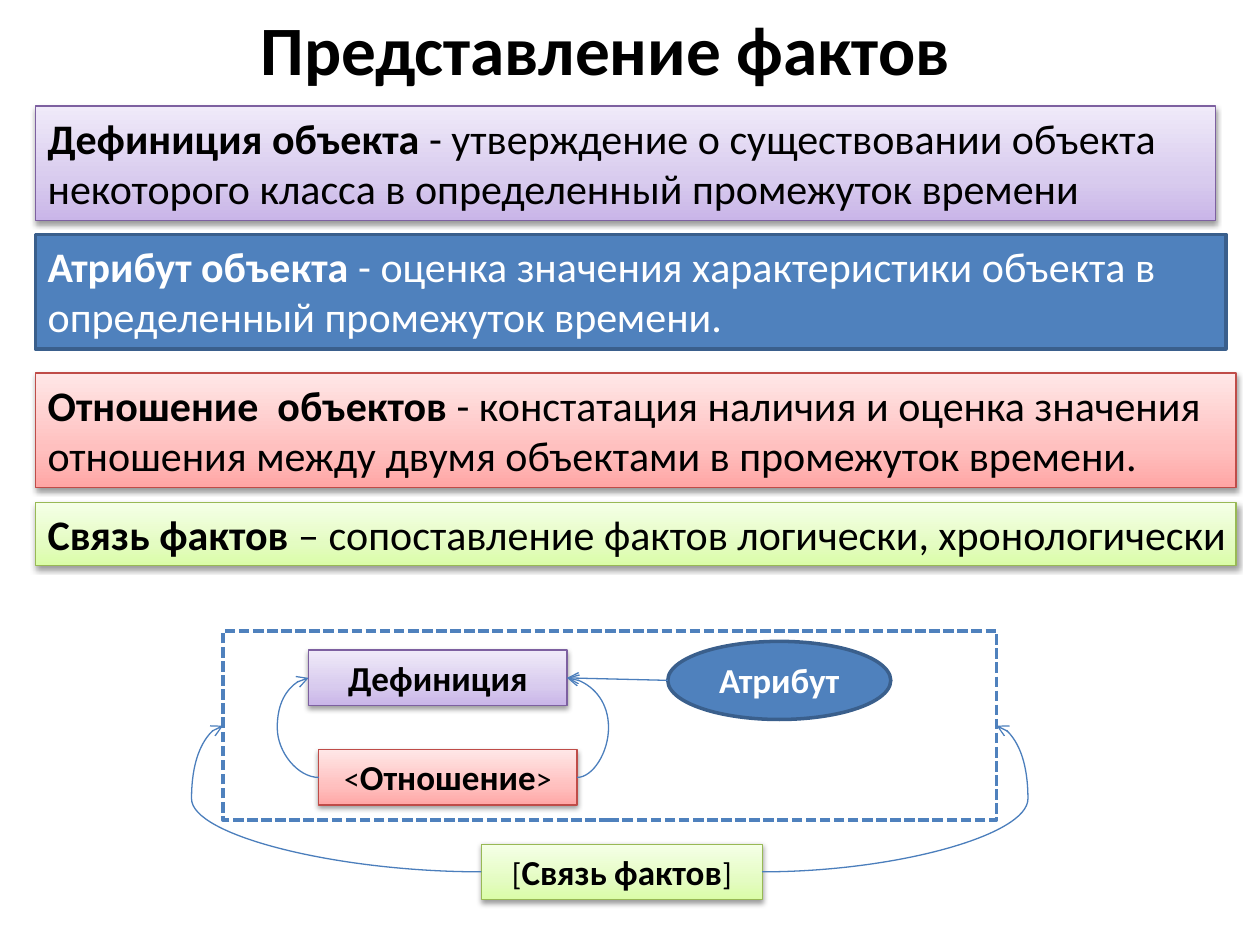
"""Build the slide on representing facts: four definitions and a diagram of their links."""
import pptx
import pptx.util
import pptx.oxml
import pptx.oxml.ns
import pptx.dml.color
import pptx.enum.dml
import pptx.enum.shapes
import pptx.enum.text
import copy

Inches, Pt = pptx.util.Inches, pptx.util.Pt
Align, Anchor = pptx.enum.text.PP_ALIGN, pptx.enum.text.MSO_ANCHOR
Shape, Connector = pptx.enum.shapes.MSO_SHAPE, pptx.enum.shapes.MSO_CONNECTOR
NAMESPACE = pptx.oxml.ns.nsdecls("a")

FONT = "Calibri"
COLORS = {"black": "000000", "white": "FFFFFF", "frame": "4F81BD", "link": "4B7EBC"}
STYLES = {
    "definition": {"fill": ("C9B5E8", "D8CBEE", "F0EAF9"), "line": "7D60A0"},
    "attribute": {"fill": ("4F81BD",), "line": "3A5F8C"},
    "relation": {"fill": ("FFA6A5", "FFC0BF", "FFE7E7"), "line": "BF4C48"},
    "fact link": {"fill": ("DAFDA7", "E4FCC2", "F5FFE7"), "line": "98B955"},
}
STOPS = (0, 0.35, 1)

TITLE = "Представление фактов"
LEFT = 0.28
STATEMENTS = [
    ("definition", 0.84, 9.37, 0.91, "Дефиниция объекта ",
     "- утверждение о существовании объекта некоторого класса в определенный промежуток времени"),
    ("attribute", 1.86, 9.45, 0.91, "Атрибут объекта ",
     "- оценка значения характеристики объекта в определенный промежуток времени."),
    ("relation", 2.96, 9.53, 0.91, "Отношение  объектов ",
     "- констатация наличия и оценка значения отношения между двумя объектами в промежуток времени."),
    ("fact link", 3.99, 9.53, 0.5, "Связь фактов ",
     "– сопоставление фактов логически, хронологически"),
]
NODES = [
    ("definition", Shape.RECTANGLE, (2.45, 5.16, 2.05, 0.44), [("Дефиниция", 20, True)]),
    ("attribute", Shape.OVAL, (5.3, 5.09, 1.77, 0.62), [("Атрибут", 20, True)]),
    ("relation", Shape.RECTANGLE, (2.53, 5.95, 2.05, 0.44),
     [("<", 18, False), ("Отношение", 20, True), (">", 18, False)]),
    ("fact link", Shape.RECTANGLE, (3.82, 6.7, 2.23, 0.44),
     [("[", 18, False), ("Связь", 20, True), (" ", 18, True), ("фактов", 20, True), ("]", 18, False)]),
]
FRAME = (1.77, 5.01, 6.14, 1.5)
CURVES = [
    ("frame", "fact link", "left", 0.25),
    ("definition", "relation", "right", 0.33),
    ("definition", "relation", "left", 0.25),
    ("frame", "fact link", "right", 0.25),
]


def rgb(value):
    return pptx.dml.color.RGBColor.from_string(value)


def write(holder, spans, color="black", align=Align.LEFT, anchor=Anchor.TOP,
          fit=pptx.enum.text.MSO_AUTO_SIZE.SHAPE_TO_FIT_TEXT, right=0.1):
    frame = holder.text_frame
    frame.word_wrap = True
    frame.auto_size = fit
    frame.vertical_anchor = anchor
    frame.margin_right = Inches(right)
    para = frame.paragraphs[0]
    para.alignment = align
    for text, size, bold in spans:
        span = para.add_run()
        span.text = text
        span.font.name = FONT
        span.font.size = Pt(size)
        span.font.bold = bold
        span.font.color.rgb = rgb(COLORS[color])


def add_box(page, kind, place, style):
    box = page.shapes.add_shape(kind, *map(Inches, place))
    box.shadow.inherit = False
    colors = STYLES[style]["fill"]
    box.line.color.rgb = rgb(STYLES[style]["line"])
    if len(colors) == 1:
        box.fill.solid()
        box.fill.fore_color.rgb = rgb(colors[0])
        box.line.width = Pt(2)
        return box
    box.line.width = Pt(0.75)
    box.fill.gradient()
    box.fill.gradient_angle = 90
    properties = box.element.spPr
    stop_list = properties.find(".//" + pptx.oxml.ns.qn("a:gsLst"))
    stop_list.append(copy.deepcopy(stop_list[-1]))
    for stop, position, color in zip(box.fill.gradient_stops, STOPS, colors):
        stop.position = position
        stop.color.rgb = rgb(color)
    properties.find(pptx.oxml.ns.qn("a:effectLst")).append(pptx.oxml.parse_xml(
        f'<a:outerShdw {NAMESPACE} blurRad="40000" dist="20000" dir="5400000" rotWithShape="0">'
        '<a:srgbClr val="000000"><a:alpha val="38000"/></a:srgbClr></a:outerShdw>'))
    return box


def add_link(page, kind, start, end, arrow):
    link = page.shapes.add_connector(kind, *map(Inches, start + end))
    link.line.color.rgb = rgb(COLORS["link"])
    link.line.width = Pt(0.75)
    link.line._get_or_add_ln().append(pptx.oxml.parse_xml(f'<a:{arrow} {NAMESPACE} type="arrow"/>'))
    link.element.spPr.append(pptx.oxml.parse_xml(f"<a:effectLst {NAMESPACE}/>"))
    return link


def side_point(place, side):
    left, top, width, height = place
    return (left + (width if side == "right" else 0), top + height / 2)


def add_curve(page, start, end, side, bulge):
    link = add_link(page, Connector.CURVE, start, end, "headEnd")
    offset = bulge if side == "right" else -bulge
    share = round(offset / (end[0] - start[0]) * 100000)
    guides = link.element.spPr.find(".//" + pptx.oxml.ns.qn("a:avLst"))
    guides.append(pptx.oxml.parse_xml(f'<a:gd {NAMESPACE} name="adj1" fmla="val {share}"/>'))


def main():
    deck = pptx.Presentation()
    deck.slide_width, deck.slide_height = Inches(10), Inches(7.5)
    page = deck.slides.add_slide(deck.slide_layouts[5])

    title = page.shapes.title
    title.left, title.top, title.width, title.height = map(Inches, (1.46, 0.08, 6.69, 0.6))
    write(title, [(TITLE, 39.6, True)], align=Align.CENTER, anchor=Anchor.MIDDLE,
          fit=pptx.enum.text.MSO_AUTO_SIZE.NONE)

    for style, top, width, height, term, meaning in STATEMENTS:
        box = add_box(page, Shape.RECTANGLE, (LEFT, top, width, height), style)
        write(box, [(term, 24, True), (meaning, 24, False)],
              color="white" if style == "attribute" else "black",
              right=0 if style == "fact link" else 0.1)

    places, boxes = {"frame": FRAME}, {}
    for style, kind, place, spans in NODES:
        places[style] = place
        boxes[style] = add_box(page, kind, place, style)
        write(boxes[style], spans, align=Align.CENTER,
              color="white" if style == "attribute" else "black")

    frame = page.shapes.add_shape(Shape.RECTANGLE, *map(Inches, FRAME))
    frame.shadow.inherit = False
    frame.fill.background()
    frame.line.color.rgb = rgb(COLORS["frame"])
    frame.line.width = Pt(2)
    frame.line.dash_style = pptx.enum.dml.MSO_LINE.SQUARE_DOT

    for target, source, side, bulge in CURVES:
        add_curve(page, side_point(places[target], side), side_point(places[source], side), side, bulge)

    link = add_link(page, Connector.STRAIGHT, side_point(places["attribute"], "left"),
                    side_point(places["definition"], "right"), "tailEnd")
    link.end_connect(boxes["definition"], 3)

    deck.save("out.pptx")


if __name__ == "__main__":
    main()
